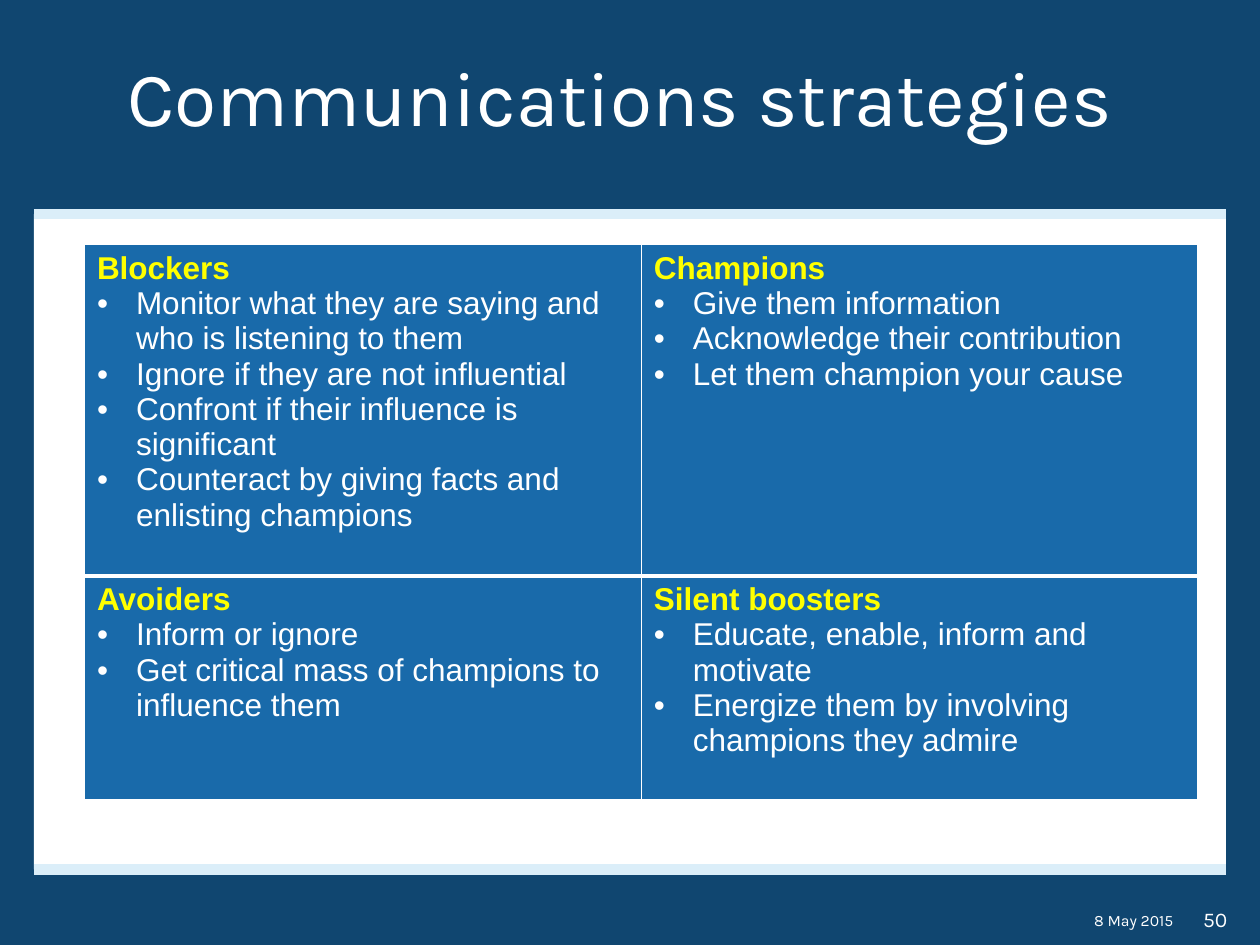
from dataclasses import dataclass

from lxml import etree
from pptx import Presentation
from pptx.dml.color import RGBColor
from pptx.enum.shapes import MSO_CONNECTOR, MSO_SHAPE
from pptx.enum.text import MSO_ANCHOR, PP_ALIGN
from pptx.oxml.ns import qn
from pptx.util import Inches, Pt

LEFT, CENTER, RIGHT = PP_ALIGN.LEFT, PP_ALIGN.CENTER, PP_ALIGN.RIGHT
TOP, MIDDLE = MSO_ANCHOR.TOP, MSO_ANCHOR.MIDDLE
RECTANGLE, STRAIGHT = MSO_SHAPE.RECTANGLE, MSO_CONNECTOR.STRAIGHT


@dataclass(frozen=True)
class Theme:
    background: str = "104670"
    panel: str = "FFFFFF"
    rule: str = "DBEEF9"
    cell: str = "196AAA"
    heading: str = "FFFF00"
    text: str = "FFFFFF"
    display_font: str = "Karla"
    body_font: str = "Arial"
    title_size: int = 44
    body_size: int = 18
    number_size: int = 12
    date_size: int = 9


theme = Theme()


def write(paragraph, text, size=theme.body_size, font=theme.body_font,
          color=theme.text, bold=False, align=LEFT, bullet=False):
    paragraph.alignment = align
    if bullet:
        properties = paragraph._p.get_or_add_pPr()
        properties.set("marL", str(Inches(0.31)))
        properties.set("indent", str(-Inches(0.31)))
        etree.SubElement(properties, qn("a:buFont"), typeface=theme.body_font)
        etree.SubElement(properties, qn("a:buChar"), char="•")
    run = paragraph.add_run()
    run.text = text
    run.font.size = Pt(size)
    run.font.name = font
    run.font.bold = bold
    run.font.color.rgb = RGBColor.from_string(color)


def set_border(cell, side, width):
    """Draw one side (L, R, T or B) of a table cell; call before filling it."""
    line = etree.SubElement(cell._tc.get_or_add_tcPr(), qn(f"a:ln{side}"),
                            w=str(Pt(width)))
    fill = etree.SubElement(line, qn("a:solidFill"))
    etree.SubElement(fill, qn("a:srgbClr"), val=theme.panel)


presentation = Presentation()
presentation.slide_width = Inches(10)
presentation.slide_height = Inches(7.5)
slide = presentation.slides.add_slide(presentation.slide_layouts[6])
slide.background.fill.solid()
slide.background.fill.fore_color.rgb = RGBColor.from_string(theme.background)

# White panel between two pale rules
margin = Inches(0.27)
panel_width = presentation.slide_width - 2 * margin
panel_top, panel_bottom = Inches(1.7), Inches(6.9)
panel = slide.shapes.add_shape(RECTANGLE, margin, panel_top, panel_width,
                               panel_bottom - panel_top)
panel.shadow.inherit = False
panel.fill.solid()
panel.fill.fore_color.rgb = RGBColor.from_string(theme.panel)
panel.line.fill.background()
for y in (panel_bottom, panel_top):
    rule = slide.shapes.add_connector(STRAIGHT, margin, y, margin + panel_width, y)
    rule.line.color.rgb = RGBColor.from_string(theme.rule)
    rule.line.width = Pt(6)
    etree.SubElement(rule._element.spPr, qn("a:effectLst"))

# Title, date and slide number
labels = [
    ("Communications strategies ", (0.27, 0.3, 9.45, 1.09), theme.title_size, CENTER, MIDDLE),
    ("8 May 2015", (3.35, 7.18, 6.06, 0.25), theme.date_size, RIGHT, TOP),
    ("50", (9.17, 7.08, 0.67, 0.43), theme.number_size, RIGHT, MIDDLE),
]
for text, box, size, align, anchor in labels:
    frame = slide.shapes.add_textbox(*map(Inches, box)).text_frame
    frame.word_wrap = True
    frame.vertical_anchor = anchor
    write(frame.paragraphs[0], text, size=size, font=theme.display_font, align=align)
    if size == theme.title_size:
        frame.paragraphs[0].line_spacing = Pt(40)

# Strategies by stakeholder type
strategies = [
    [
        ("Blockers", ["Monitor what they are saying and who is listening to them",
                      "Ignore if they are not influential",
                      "Confront if their influence is significant",
                      "Counteract by giving facts and enlisting champions"]),
        ("Champions", ["Give them information",
                       "Acknowledge their contribution",
                       "Let them champion your cause"]),
    ],
    [
        ("Avoiders", ["Inform or ignore",
                      "Get critical mass of champions to influence them"]),
        ("Silent boosters", ["Educate, enable, inform and motivate",
                             "Energize them by involving champions they admire"]),
    ],
]
row_heights = [2.63, 1.78]
row_borders = [{"L": 1, "R": 1, "T": 1, "B": 3}, {"L": 1, "R": 1, "T": 3, "B": 1}]
table = slide.shapes.add_table(2, 2, Inches(0.67), Inches(1.94), Inches(8.84),
                               Inches(sum(row_heights))).table
for row_index, groups in enumerate(strategies):
    table.rows[row_index].height = Inches(row_heights[row_index])
    for column_index, (heading, actions) in enumerate(groups):
        cell = table.cell(row_index, column_index)
        for side, width in row_borders[row_index].items():
            set_border(cell, side, width)
        cell.fill.solid()
        cell.fill.fore_color.rgb = RGBColor.from_string(theme.cell)
        frame = cell.text_frame
        write(frame.paragraphs[0], heading, color=theme.heading, bold=True)
        for action in actions:
            write(frame.add_paragraph(), action, bullet=True)

presentation.save("out.pptx")
